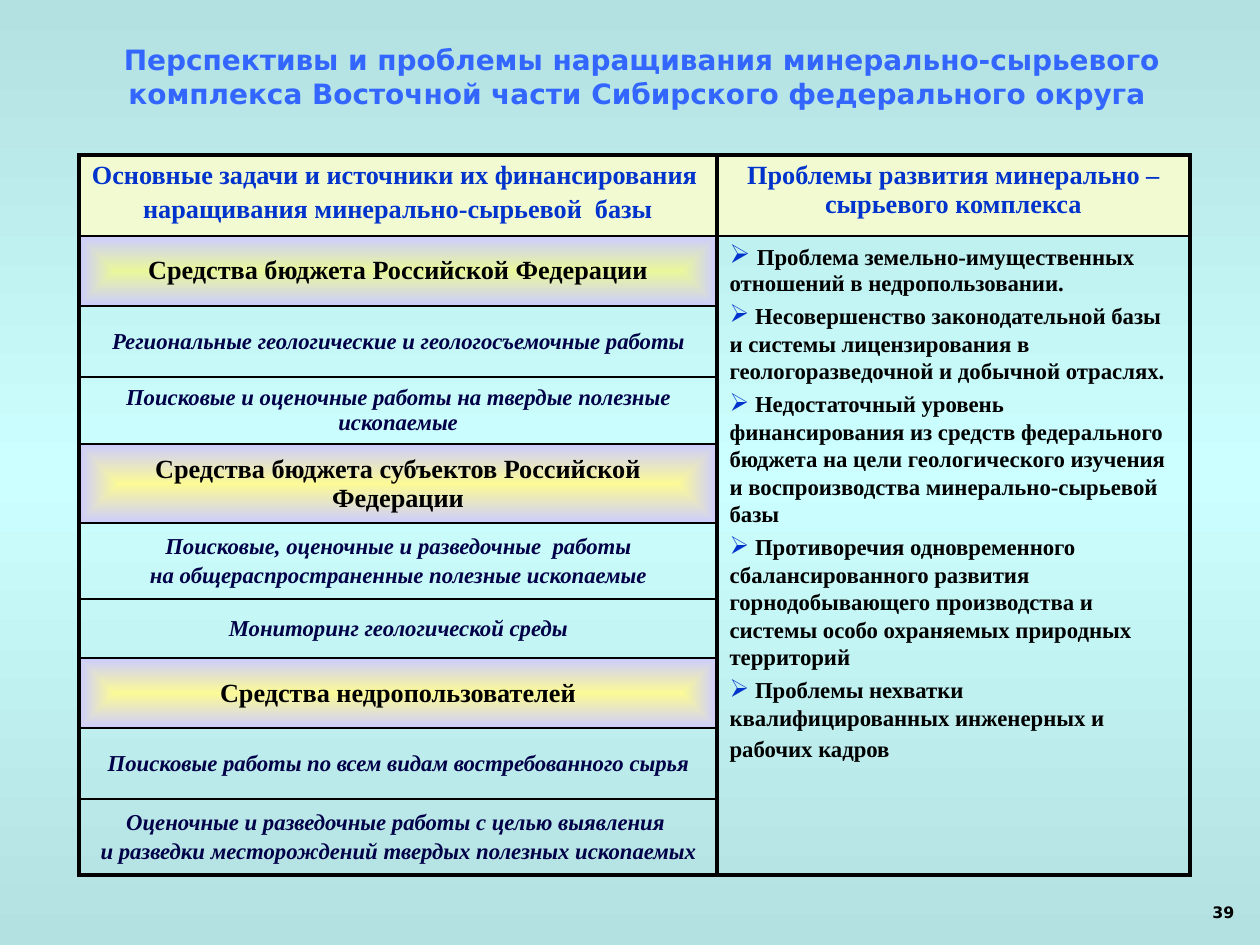
from pptx import Presentation
from pptx.dml.color import RGBColor
from pptx.enum.text import MSO_ANCHOR as Anchor, PP_ALIGN as Align
from pptx.oxml import parse_xml
from pptx.oxml.ns import nsdecls, qn
from pptx.util import Pt

PX = 914400 // 126
BLACK = RGBColor(0x00, 0x00, 0x00)
TITLE_BLUE = RGBColor(0x33, 0x66, 0xFF)
HEAD_BLUE = RGBColor(0x00, 0x33, 0xCC)
NAVY = RGBColor(0x00, 0x00, 0x48)
CREAM = RGBColor(0xF2, 0xFA, 0xD2)
LIME = RGBColor(0xEA, 0xF7, 0x9B)
YELLOW = RGBColor(0xFC, 0xFA, 0x96)
LILAC = RGBColor(0xCC, 0xCC, 0xFF)
TEAL = RGBColor(0xB3, 0xE0, 0xE0)
AQUA = RGBColor(0xCC, 0xFF, 0xFF)
SANS, SERIF = "DejaVu Sans", "Times New Roman"

TITLE = ("Перспективы и проблемы наращивания минерально-сырьевого комплекса "
         "Восточной части Сибирского федерального округа ")
PAGE = "39"
HEADINGS = [
    ["Основные задачи и источники их финансирования ", "наращивания минерально-сырьевой  базы"],
    ["Проблемы развития минерально – сырьевого комплекса"],
]
FUNDING = [
    (70, LIME, ["Средства бюджета Российской Федерации"]),
    (71, None, ["Региональные геологические и геологосъемочные работы"]),
    (67, None, ["Поисковые и оценочные работы на твердые полезные ископаемые"]),
    (79, YELLOW, ["Средства бюджета субъектов Российской Федерации"]),
    (76, None, ["Поисковые, оценочные и разведочные  работы",
                "на общераспространенные полезные ископаемые"]),
    (59, None, ["Мониторинг геологической среды"]),
    (70, YELLOW, ["Средства недропользователей"]),
    (71, None, ["Поисковые работы по всем видам востребованного сырья"]),
    (76, None, ["Оценочные и разведочные работы с целью выявления ",
                "и разведки месторождений твердых полезных ископаемых"]),
]
PROBLEMS = [
    "Проблема земельно-имущественных отношений в недропользовании.",
    "Несовершенство законодательной базы и системы лицензирования в "
    "геологоразведочной и добычной отраслях.",
    "Недостаточный уровень финансирования из средств федерального бюджета на цели "
    "геологического изучения и воспроизводства минерально-сырьевой базы",
    "Противоречия одновременного сбалансированного развития горнодобывающего "
    "производства и системы особо охраняемых природных территорий",
    "Проблемы нехватки квалифицированных инженерных и рабочих кадров",
]
COLUMNS = [638, 473]
HEAD_HEIGHT = 75
THICK, THIN = 2.25, 1


def gradient(stops, direction):
    marks = "".join(f'<a:gs pos="{at * 1000}"><a:srgbClr val="{color}"/></a:gs>'
                    for at, color in stops)
    return parse_xml(f'<a:gradFill {nsdecls("a")} rotWithShape="1"><a:gsLst>{marks}</a:gsLst>'
                     f'{direction}</a:gradFill>')


def add_run(paragraph, text, size, color, font=SERIF, bold=True, italic=False):
    run = paragraph.add_run()
    run.text = text
    run.font.name, run.font.size = font, Pt(size)
    run.font.bold, run.font.italic = bold, italic
    run.font.color.rgb = color


def paragraphs(frame, count):
    return [frame.paragraphs[0]] + [frame.add_paragraph() for _ in range(count - 1)]


def add_lines(frame, lines, size, color, italic=False):
    for paragraph, line in zip(paragraphs(frame, len(lines)), lines):
        paragraph.alignment = Align.CENTER
        paragraph.space_before = Pt(size * 0.2)
        add_run(paragraph, line, size, color, italic=italic)


def add_bullet(paragraph, percent):
    properties = paragraph._p.get_or_add_pPr()
    for tag in (f'buClr {nsdecls("a")}><a:srgbClr val="{HEAD_BLUE}"/></a:buClr',
                f'buSzPct {nsdecls("a")} val="{percent * 1000}"/',
                f'buChar {nsdecls("a")} char="➢"/'):
        properties.append(parse_xml(f"<a:{tag}>"))


def set_borders(cell, **widths):
    properties = cell._tc.get_or_add_tcPr()
    for side in "LRTB":
        width = widths[side]
        paint = f'<a:solidFill><a:srgbClr val="{BLACK}"/></a:solidFill>' if width else "<a:noFill/>"
        properties.append(parse_xml(
            f'<a:ln{side} {nsdecls("a")} w="{Pt(width)}">{paint}</a:ln{side}>'))


def add_text(slide, box, text, size, color, alignment, anchor):
    frame = slide.shapes.add_textbox(*(PX * side for side in box)).text_frame
    frame.word_wrap, frame.vertical_anchor = True, anchor
    frame.paragraphs[0].alignment = alignment
    add_run(frame.paragraphs[0], text, size, color, SANS)


def fill_problems(frame):
    for index, (paragraph, problem) in enumerate(zip(paragraphs(frame, len(PROBLEMS)), PROBLEMS)):
        if index:
            paragraph.line_spacing, paragraph.space_before = 1.1, Pt(3.25)
            add_run(paragraph, " " + problem, 13, BLACK)
        else:
            add_run(paragraph, " ", 15, BLACK, bold=False)
            add_run(paragraph, problem, 13, BLACK)
        add_bullet(paragraph, 110 if index else 100)
    add_run(paragraph, " ", 15, BLACK)


def add_funding_table(slide):
    heights = [HEAD_HEIGHT] + [height for height, _, _ in FUNDING]
    last = len(FUNDING)
    table = slide.shapes.add_table(len(heights), len(COLUMNS), PX * 79, PX * 155,
                                   PX * sum(COLUMNS), PX * sum(heights)).table
    table.first_row = table.horz_banding = False
    for column, width in zip(table.columns, COLUMNS):
        column.width = PX * width
    for row, height in zip(table.rows, heights):
        row.height = PX * height
    table.cell(1, 1).merge(table.cell(last, 1))

    for row in range(last + 1):
        for column in range(len(COLUMNS)):
            cell = table.cell(row, column)
            top = THICK if row == 0 else 0 if cell.is_spanned else THIN
            ends = row == last or cell.is_merge_origin
            bottom = THICK if ends else 0 if cell.is_spanned else THIN
            set_borders(cell, L=THICK, R=THICK, T=top, B=bottom)
            cell.fill.background()

    for column, lines in enumerate(HEADINGS):
        cell = table.cell(0, column)
        cell.fill.solid()
        cell.fill.fore_color.rgb = CREAM
        add_lines(cell.text_frame, lines, 15, HEAD_BLUE)
    for row, (_, glow, lines) in enumerate(FUNDING, 1):
        cell = table.cell(row, 0)
        cell.vertical_anchor = Anchor.MIDDLE
        if glow:
            properties = cell._tc.tcPr
            center = ('<a:path path="shape"><a:fillToRect l="50000" t="50000" '
                      'r="50000" b="50000"/></a:path>')
            properties.replace(properties.find(qn("a:noFill")),
                               gradient([(0, glow), (100, LILAC)], center))
            add_lines(cell.text_frame, lines, 15, BLACK)
        else:
            add_lines(cell.text_frame, lines, 13, NAVY, italic=True)
    fill_problems(table.cell(1, 1).text_frame)


def main():
    """Build the slide on funding sources and problems of the mineral resource complex."""
    deck = Presentation()
    deck.slide_width, deck.slide_height = PX * 1260, PX * 945
    slide = deck.slides.add_slide(deck.slide_layouts[6])
    slide.background.fill.solid()
    backdrop = slide.element.find(".//" + qn("p:bgPr"))
    backdrop.replace(backdrop.find(qn("a:solidFill")),
                     gradient([(0, TEAL), (50, AQUA), (100, TEAL)],
                              '<a:lin ang="5400000" scaled="1"/>'))
    add_text(slide, (24, 16, 1236, 120), TITLE, 16, TITLE_BLUE, Align.CENTER, Anchor.MIDDLE)
    add_funding_table(slide)
    add_text(slide, (1200, 897, 60, 30), PAGE, 9, BLACK, Align.LEFT, Anchor.TOP)
    deck.save("out.pptx")


if __name__ == "__main__":
    main()
